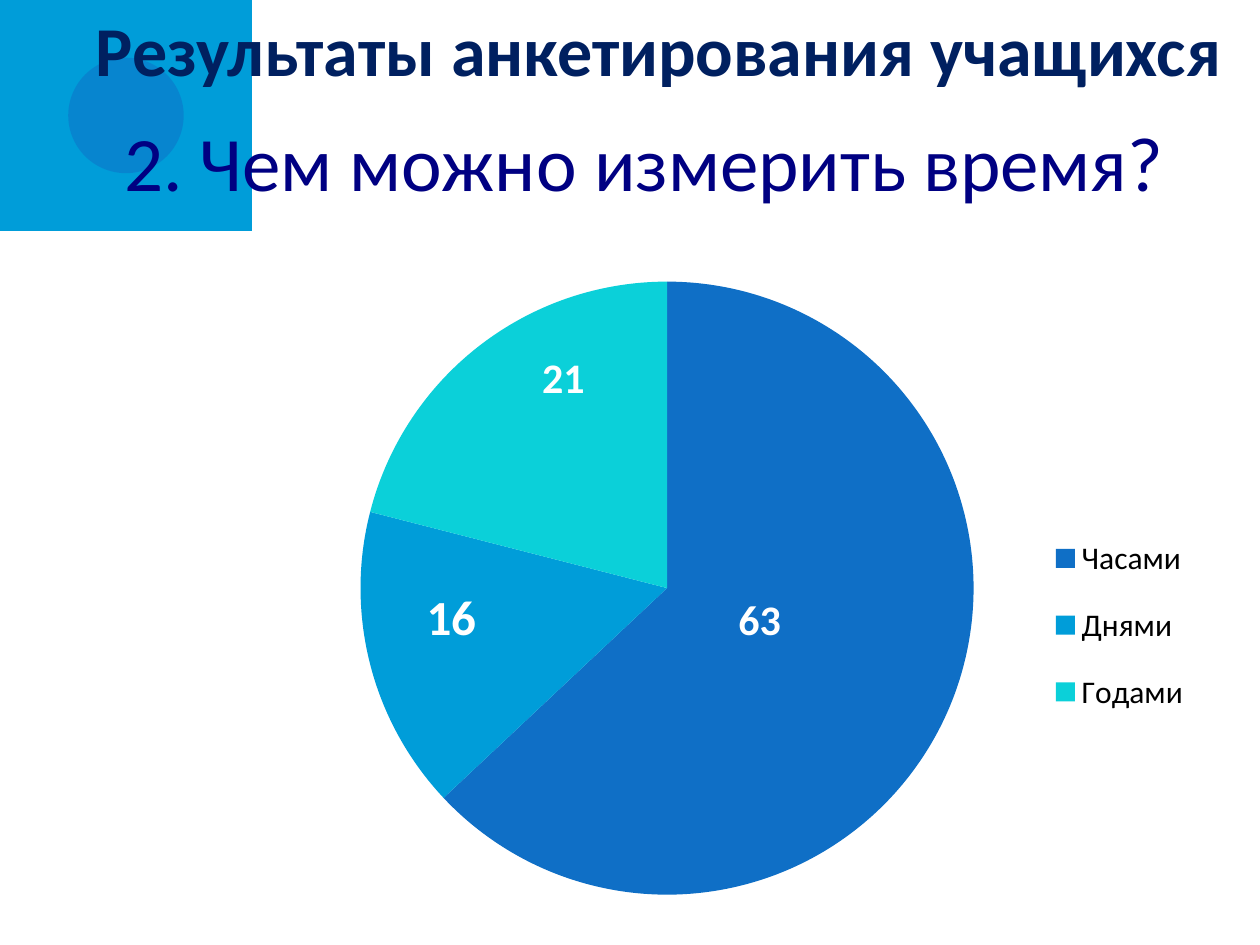
import pptx
import pptx.chart.data
import pptx.dml.color
import pptx.enum.chart
import pptx.enum.shapes
import pptx.enum.text
import pptx.oxml
import pptx.oxml.ns
import pptx.util

Pt = pptx.util.Pt
RGB = pptx.dml.color.RGBColor
BLUE = RGB(0x0F, 0x6F, 0xC6)
SKY = RGB(0x00, 0x9D, 0xD9)
AQUA = RGB(0x0B, 0xD0, 0xD9)
GREEN = RGB(0x10, 0xCF, 0x9B)
NAVY = RGB(0x00, 0x20, 0x60)
INK = RGB(0x00, 0x00, 0x82)
WHITE = RGB(0xFF, 0xFF, 0xFF)
BLACK = RGB(0x00, 0x00, 0x00)
FONT = "Calibri"


def set_font(font, size, color, bold=False):
    """Give a font its face, size, colour and weight."""
    font.name = FONT
    font.size = Pt(size)
    font.bold = bold
    font.color.rgb = color


def add_form(slide, kind, box, color):
    """Add a flat filled shape without outline."""
    form = slide.shapes.add_shape(kind, *map(Pt, box))
    form.shadow.inherit = False
    form.fill.solid()
    form.fill.fore_color.rgb = color
    form.line.fill.background()
    return form


def add_corner(slide, box):
    """Draw the corner block with its half-clear disc."""
    left, top, width, height = box
    kinds = pptx.enum.shapes.MSO_SHAPE
    add_form(slide, kinds.RECTANGLE, box, SKY)
    side = height / 2
    disc = add_form(slide, kinds.OVAL,
                    (left + (width - side) / 2, top + (height - side) / 2, side, side), BLUE)
    tint = disc._element.spPr.find(".//" + pptx.oxml.ns.qn("a:srgbClr"))
    tint.append(pptx.oxml.parse_xml(
        f'<a:alpha {pptx.oxml.ns.nsdecls("a")} val="50000"/>'))


def set_text(shape, box, text, size, color, bold=False):
    """Place a shape and write one centred line in it."""
    shape.left, shape.top, shape.width, shape.height = map(Pt, box)
    frame = shape.text_frame
    frame.text = text
    frame.word_wrap = True
    frame.auto_size = pptx.enum.text.MSO_AUTO_SIZE.NONE
    frame.vertical_anchor = pptx.enum.text.MSO_ANCHOR.TOP
    line = frame.paragraphs[0]
    line.alignment = pptx.enum.text.PP_ALIGN.CENTER
    set_font(line.runs[0].font, size, color, bold)


def add_head(slide, box):
    """Write the title above the question."""
    left, top, width, height = box
    title = slide.shapes.title
    slide.shapes._spTree.append(title._element)
    set_text(title, (left + 16, top, width - 16, 90),
             "Результаты анкетирования учащихся", 40, NAVY, True)
    ask = slide.shapes.add_textbox(0, 0, 0, 0)
    set_text(ask, (left, top + 62, width, height - 62),
             "2. Чем можно измерить время?", 44, INK)


def make_layout(modes="", **parts):
    """Build a manual chart layout from fractions of the chart."""
    vals = "".join(f'<c:{key} val="{val}"/>' for key, val in parts.items())
    return pptx.oxml.parse_xml(
        f'<c:layout {pptx.oxml.ns.nsdecls("c")}><c:manualLayout>'
        f'{modes}{vals}</c:manualLayout></c:layout>')


def add_pie(slide, box):
    """Add the pie of answers with its labels and legend."""
    enums = pptx.enum.chart
    data = pptx.chart.data.CategoryChartData()
    data.categories = ["Часами", "Днями", "Годами", " "]
    data.add_series("Series 1", (63, 16, 21, 0))
    chart = slide.shapes.add_chart(enums.XL_CHART_TYPE.PIE, *map(Pt, box), data).chart
    set_font(chart.font, 18, BLACK)
    chart.has_title = False
    edges = '<c:xMode val="edge"/><c:yMode val="edge"/>'
    area = chart._chartSpace.chart.plotArea
    for old in area.findall(pptx.oxml.ns.qn("c:layout")):
        area.remove(old)
    area.insert(0, make_layout('<c:layoutTarget val="inner"/>' + edges,
                               x=0.11, y=0.07, w=0.64, h=0.91))

    plot = chart.plots[0]
    plot.vary_by_categories = True
    series = plot.series[0]
    for spot, color in enumerate((BLUE, SKY, AQUA, GREEN)):
        fill = series.points[spot].format.fill
        fill.solid()
        fill.fore_color.rgb = color
    series.data_labels.show_value = False
    marks = ((24, -0.05, -0.04), (28, -0.07, -0.01), (24, -0.01, -0.13))
    for spot, (size, shift, drop) in enumerate(marks):
        label = series.points[spot].data_label
        set_font(label.font, size, WHITE, True)
        label.position = enums.XL_LABEL_POSITION.CENTER
        series.data_labels._element[spot].insert(1, make_layout(x=shift, y=drop))

    chart.has_legend = True
    legend = chart.legend
    legend.position = enums.XL_LEGEND_POSITION.RIGHT
    legend.include_in_layout = False
    set_font(legend.font, 18, BLACK)
    key = legend._element
    for old in key.findall(pptx.oxml.ns.qn("c:layout")):
        key.remove(old)
    key.insert(1, pptx.oxml.parse_xml(
        f'<c:legendEntry {pptx.oxml.ns.nsdecls("c")}>'
        '<c:idx val="3"/><c:delete val="1"/></c:legendEntry>'))
    key.insert(2, make_layout(edges, x=0.82, y=0.41, w=0.16, h=0.34))


def main():
    """Build the survey slide and save it."""
    deck = pptx.Presentation()
    deck.slide_width, deck.slide_height = Pt(720), Pt(540)
    slide = deck.slides.add_slide(deck.slide_layouts[5])
    add_corner(slide, (0, 0, 144, 132))
    add_head(slide, (16.5, 0, 703.5, 122.5))
    add_pie(slide, (144.7, 134, 550, 385))
    deck.save("out.pptx")


if __name__ == "__main__":
    main()
